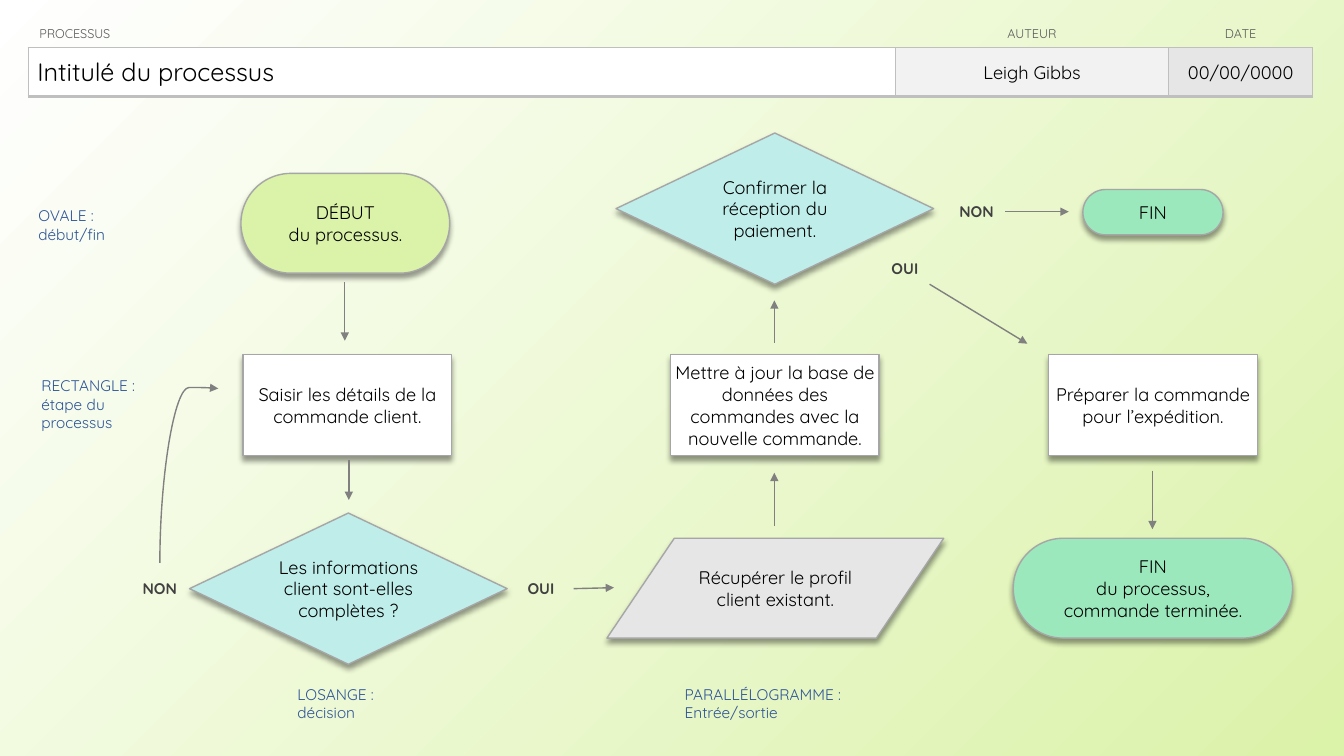
from lxml.etree import SubElement
from pptx import Presentation
from pptx.dml.color import RGBColor
from pptx.enum.shapes import MSO_CONNECTOR as CONN, MSO_SHAPE as SHAPE
from pptx.enum.text import MSO_ANCHOR as ANCHOR, PP_ALIGN as ALIGN
from pptx.oxml.ns import qn
from pptx.util import Inches, Pt

COLORS = {
    "white": "FFFFFF", "lime": "DBF2A9", "aqua": "BFEEEA", "mint": "9CE8BD",
    "parallelogram": "E7E6E6", "author": "F2F2F2", "date": "E6E6E6",
    "outline": "A6A6A6", "border": "BFBFBF", "arrow": "808080",
    "black": "000000", "heading": "595959", "legend": "2F5597", "answer": "404040",
}
STEP_FONT = {"size": Pt(13), "color": "black"}
LEGEND_FONT = {"size": Pt(11), "color": "legend"}
ANSWER_FONT = {"size": Pt(11), "color": "answer", "bold": True}
HEADING_FONT = {"size": Pt(9), "color": "heading"}
TITLE_FONT = {"size": Pt(18), "color": "black"}

STEP_W, STEP_H, STEP_TOP = 2.07, 1, 3.52
ROUND_H = 0.99
LOWER_TOP = 5.34
DIAMOND_W, DIAMOND_H = 3.15, 1.5
LABEL_H = 0.5


def rgb(name):
    return RGBColor.from_string(COLORS[name])


def write(tf, paragraphs, font, align):
    tf.text = ""
    for i, text in enumerate(paragraphs):
        p = tf.add_paragraph() if i else tf.paragraphs[0]
        p.text = text
        p.alignment = align
        for r in p.runs:
            r.font.name = "Quicksand"
            for key, value in font.items():
                if key == "color":
                    r.font.color.rgb = rgb(value)
                else:
                    setattr(r.font, key, value)


def frame_text(sp, paragraphs, font, align, inset=0.02):
    tf = sp.text_frame
    margins = dict.fromkeys(
        ("margin_left", "margin_right", "margin_top", "margin_bottom"), Inches(inset))
    for key, value in {**margins, "word_wrap": True, "vertical_anchor": ANCHOR.MIDDLE}.items():
        setattr(tf, key, value)
    write(tf, paragraphs, font, align)


def add_shadow(sp):
    sp.shadow.inherit = False
    effects = sp._element.spPr.find(qn("a:effectLst"))
    shadow = SubElement(effects, qn("a:outerShdw"), blurRad=str(Pt(4)), dist=str(Pt(3)),
                        dir="5400000", algn="t", rotWithShape="0")
    color = SubElement(shadow, qn("a:srgbClr"), val=COLORS["black"])
    SubElement(color, qn("a:alpha"), val="40000")


def add_node(s, kind, box, fill, paragraphs, inset=0.02):
    sp = s.shapes.add_shape(kind, *map(Inches, box))
    if kind == SHAPE.ROUNDED_RECTANGLE:
        sp.adjustments[0] = 0.5
    sp.fill.solid()
    sp.fill.fore_color.rgb = rgb(fill)
    sp.line.color.rgb = rgb("outline")
    sp.line.width = Pt(1)
    add_shadow(sp)
    frame_text(sp, paragraphs, STEP_FONT, ALIGN.CENTER, inset)


def add_label(s, x, y, w, paragraphs, font, align):
    sp = s.shapes.add_textbox(*map(Inches, (x, y, w, LABEL_H)))
    frame_text(sp, paragraphs, font, align)


def add_arrow(s, points, kind=CONN.STRAIGHT):
    c = s.shapes.add_connector(kind, *map(Inches, points))
    c.line.color.rgb = rgb("arrow")
    c.line.width = Pt(1)
    SubElement(c.line._get_or_add_ln(), qn("a:tailEnd"), type="triangle")
    SubElement(c._element.spPr, qn("a:effectLst"))
    return c


def add_return_arrow(s):
    c = add_arrow(s, (2.74, 5.01, 1.01, 4.43), CONN.CURVE)
    spPr = c._element.spPr
    spPr.find(qn("a:xfrm")).set("rot", "5400000")
    geometry = spPr.find(qn("a:prstGeom"))
    adjustments = geometry.find(qn("a:avLst"))
    if adjustments is None:
        adjustments = SubElement(geometry, qn("a:avLst"))
    SubElement(adjustments, qn("a:gd"), name="adj1", fmla="val 100600")


def add_borders(cell):
    tcPr = cell._tc.get_or_add_tcPr()
    for side, width in (("L", 1), ("R", 1), ("T", 1), ("B", 2.25)):
        ln = SubElement(tcPr, qn("a:ln" + side), w=str(Pt(width)))
        fill = SubElement(ln, qn("a:solidFill"))
        SubElement(fill, qn("a:srgbClr"), val=COLORS["border"])


def add_header(s):
    frame = s.shapes.add_table(2, 3, *map(Inches, (0.28, 0.19, 12.74, 0.77)))
    table = frame.table
    table.first_row = table.horz_banding = False
    style = table._tbl.tblPr.find(qn("a:tableStyleId"))
    style.text = "{2D5ABB26-0587-4C30-8999-92F81FD0307C}"
    for row, height in zip(table.rows, (0.28, 0.49)):
        row.height = Inches(height)
    columns = (
        (8.6, "PROCESSUS", "Intitulé du processus", "white", TITLE_FONT, ALIGN.LEFT, (0.11, 0.09)),
        (2.71, "AUTEUR", "Leigh Gibbs", "author", STEP_FONT, ALIGN.CENTER, (0.01, 0.01)),
        (1.43, "DATE", "00/00/0000", "date", STEP_FONT, ALIGN.CENTER, (0.01, 0.01)),
    )
    for i, (width, heading, value, fill, font, align, lefts) in enumerate(columns):
        table.columns[i].width = Inches(width)
        head, body = table.cell(0, i), table.cell(1, i)
        for cell, text, cell_font, left in zip(
                (head, body), (heading, value), (HEADING_FONT, font), lefts):
            cell.vertical_anchor = ANCHOR.MIDDLE
            cell.margin_left = Inches(left)
            cell.margin_top = cell.margin_right = Inches(0.01)
            cell.margin_bottom = 0
            write(cell.text_frame, [text], cell_font, align)
        head.fill.background()
        add_borders(body)
        body.fill.solid()
        body.fill.fore_color.rgb = rgb(fill)


def set_background(s):
    fill = s.background.fill
    fill.gradient()
    fill.gradient_angle = 315
    for stop, color in zip(fill.gradient_stops, ("white", "lime")):
        stop.color.rgb = rgb(color)


def main():
    prs = Presentation()
    prs.slide_width, prs.slide_height = Inches(13.33), Inches(7.5)
    s = prs.slides.add_slide(prs.slide_layouts[6])
    set_background(s)
    add_header(s)

    for box, fill, paragraphs in (
        ((2.39, 1.72, STEP_W, ROUND_H), "lime", ["DÉBUT", "du processus."]),
        ((10.74, 1.88, 1.39, 0.45), "mint", ["FIN"]),
        ((10.05, LOWER_TOP, 2.77, ROUND_H), "mint",
         ["FIN", "du processus,\ncommande terminée."]),
    ):
        add_node(s, SHAPE.ROUNDED_RECTANGLE, box, fill, paragraphs)

    for x, paragraphs in (
        (2.41, ["Saisir les détails de la commande client."]),
        (6.65, ["Mettre à jour la base de données des commandes avec la nouvelle commande."]),
        (10.4, ["Préparer la commande", "pour l’expédition."]),
    ):
        add_node(s, SHAPE.FLOWCHART_PROCESS, (x, STEP_TOP, STEP_W, STEP_H), "white", paragraphs)

    for x, y, text in (
        (1.88, 5.09, "Les informations client sont-elles complètes ?"),
        (6.11, 1.32, "Confirmer la réception du paiement."),
    ):
        add_node(s, SHAPE.FLOWCHART_DECISION, (x, y, DIAMOND_W, DIAMOND_H), "aqua", [text], 0)

    add_node(s, SHAPE.FLOWCHART_DATA, (6.02, LOWER_TOP, 3.34, ROUND_H), "parallelogram",
             ["Récupérer le profil client existant."])

    for x, y, w, paragraphs in (
        (0.36, 1.98, 1.73, ["OVALE :", "début/fin"]),
        (0.39, 3.76, 1.38, ["RECTANGLE :", "étape du processus"]),
        (2.93, 6.73, 1.16, ["LOSANGE :", "décision"]),
        (6.77, 6.73, 1.84, ["PARALLÉLOGRAMME :", "Entrée/sortie"]),
    ):
        add_label(s, x, y, w, paragraphs, LEGEND_FONT, ALIGN.LEFT)

    for x, y, w, text in (
        (1.17, 5.59, 0.83, "NON"), (4.97, 5.59, 0.79, "OUI"),
        (8.58, 2.41, 0.79, "OUI"), (9.29, 1.85, 0.79, "NON"),
    ):
        add_label(s, x, y, w, [text], ANSWER_FONT, ALIGN.CENTER)

    for points in (
        (3.42, 2.8, 3.42, 3.38), (3.46, 4.56, 3.46, 4.96), (5.69, 5.84, 6.09, 5.83),
        (7.68, 5.22, 7.68, 4.69), (7.68, 3.4, 7.68, 2.98), (9.22, 2.82, 10.19, 3.41),
        (9.97, 2.1, 10.6, 2.1), (11.43, 4.67, 11.43, 5.25),
    ):
        add_arrow(s, points)
    add_return_arrow(s)
    prs.save("out.pptx")


if __name__ == "__main__":
    main()
